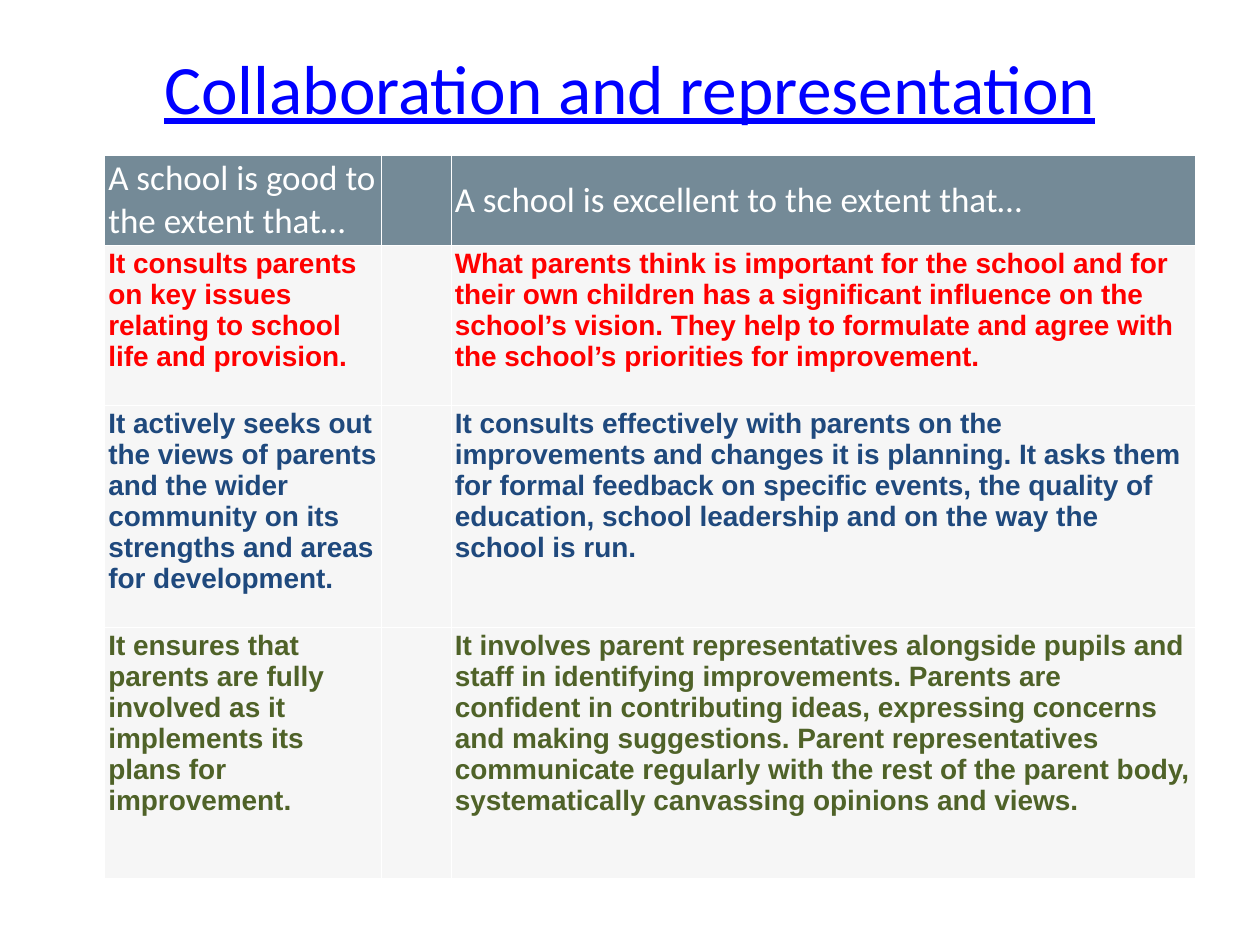
import pptx
import pptx.dml.color
import pptx.enum.text
import pptx.oxml
import pptx.oxml.ns
import pptx.util

WIDTH, HEIGHT = 10, 7.5
COLUMNS = [2.2, 0.55, 5.91]
ROWS = [0.71, 1.27, 1.76, 1.99]
HEADINGS = ["A school is good to the extent that…",
            "A school is excellent to the extent that…"]
CRITERIA = [
    ("FF0000",
     "It consults parents on key issues relating to school life and provision.",
     "What parents think is important for the school and for their own children has a "
     "significant influence on the school’s vision. They help to formulate and agree "
     "with the school’s priorities for improvement."),
    ("1F497D",
     "It actively seeks out the views of parents and the wider community on its "
     "strengths and areas for development.",
     "It consults effectively with parents on the improvements and changes it is "
     "planning. It asks them for formal feedback on specific events, the quality of "
     "education, school leadership and on the way the school is run."),
    ("4F6228",
     "It ensures that parents are fully involved as it implements its plans for "
     "improvement.",
     "It involves parent representatives alongside pupils and staff in identifying "
     "improvements. Parents are confident in contributing ideas, expressing concerns "
     "and making suggestions. Parent representatives communicate regularly with the "
     "rest of the parent body, systematically canvassing opinions and views."),
]


def color(value):
    """Turn a hex string into a colour."""
    return pptx.dml.color.RGBColor.from_string(value)


def add_span(para, text, size, font, tint, bold=False, underline=False):
    """Add one formatted run to a paragraph."""
    span = para.add_run()
    span.text = text
    span.font.size = pptx.util.Pt(size)
    span.font.name = font
    span.font.bold = bold
    span.font.underline = underline
    span.font.color.rgb = color(tint)


def add_title(page, text):
    """Place and fill the title placeholder."""
    box = page.shapes.title
    box.left, box.top, box.width, box.height = map(
        pptx.util.Inches, (0.05 * WIDTH, 0.04 * HEIGHT, 0.9 * WIDTH, 0.77))
    box.text_frame.vertical_anchor = pptx.enum.text.MSO_ANCHOR.MIDDLE
    para = box.text_frame.paragraphs[0]
    para.alignment = pptx.enum.text.PP_ALIGN.CENTER
    add_span(para, text, 39.6, "Calibri", "0000FF", underline=True)


def style_cell(cell, fill):
    """Give a cell its margins, white borders and fill."""
    cell.margin_left = cell.margin_right = pptx.util.Inches(0.03)
    cell.margin_top = cell.margin_bottom = pptx.util.Inches(0.02)
    properties = cell._tc.get_or_add_tcPr()
    for side in "LRTB":
        properties.append(pptx.oxml.parse_xml(
            f'<a:ln{side} {pptx.oxml.ns.nsdecls("a")} w="9525"><a:solidFill>'
            f'<a:srgbClr val="FFFFFF"/></a:solidFill></a:ln{side}>'))
    cell.fill.solid()
    cell.fill.fore_color.rgb = color(fill)


def add_criteria_table(page):
    """Add the table comparing good and excellent schools."""
    table = page.shapes.add_table(
        len(ROWS), len(COLUMNS), pptx.util.Inches(0.83), pptx.util.Inches(1.23),
        pptx.util.Inches(sum(COLUMNS)), pptx.util.Inches(sum(ROWS))).table
    for column, width in zip(table.columns, COLUMNS):
        column.width = pptx.util.Inches(width)
    for row, height in zip(table.rows, ROWS):
        row.height = pptx.util.Inches(height)
        for cell in row.cells:
            style_cell(cell, "748A97" if row is table.rows[0] else "F6F6F6")
    for cell in table.rows[0].cells:
        cell.fill.fore_color.rgb = color("748A97")
        cell.vertical_anchor = pptx.enum.text.MSO_ANCHOR.MIDDLE
    for column, text in zip((0, 2), HEADINGS):
        para = table.cell(0, column).text_frame.paragraphs[0]
        add_span(para, text, 20, "Calibri", "FFFFFF")
    for row, (tint, *texts) in enumerate(CRITERIA, 1):
        for column, text in zip((0, 2), texts):
            para = table.cell(row, column).text_frame.paragraphs[0]
            add_span(para, text, 16, "Arial", tint, bold=True)


def main():
    """Build the slide and save it."""
    deck = pptx.Presentation()
    deck.slide_width = pptx.util.Inches(WIDTH)
    deck.slide_height = pptx.util.Inches(HEIGHT)
    page = deck.slides.add_slide(deck.slide_layouts[5])
    add_title(page, "Collaboration and representation")
    add_criteria_table(page)
    deck.save("out.pptx")


if __name__ == "__main__":
    main()
